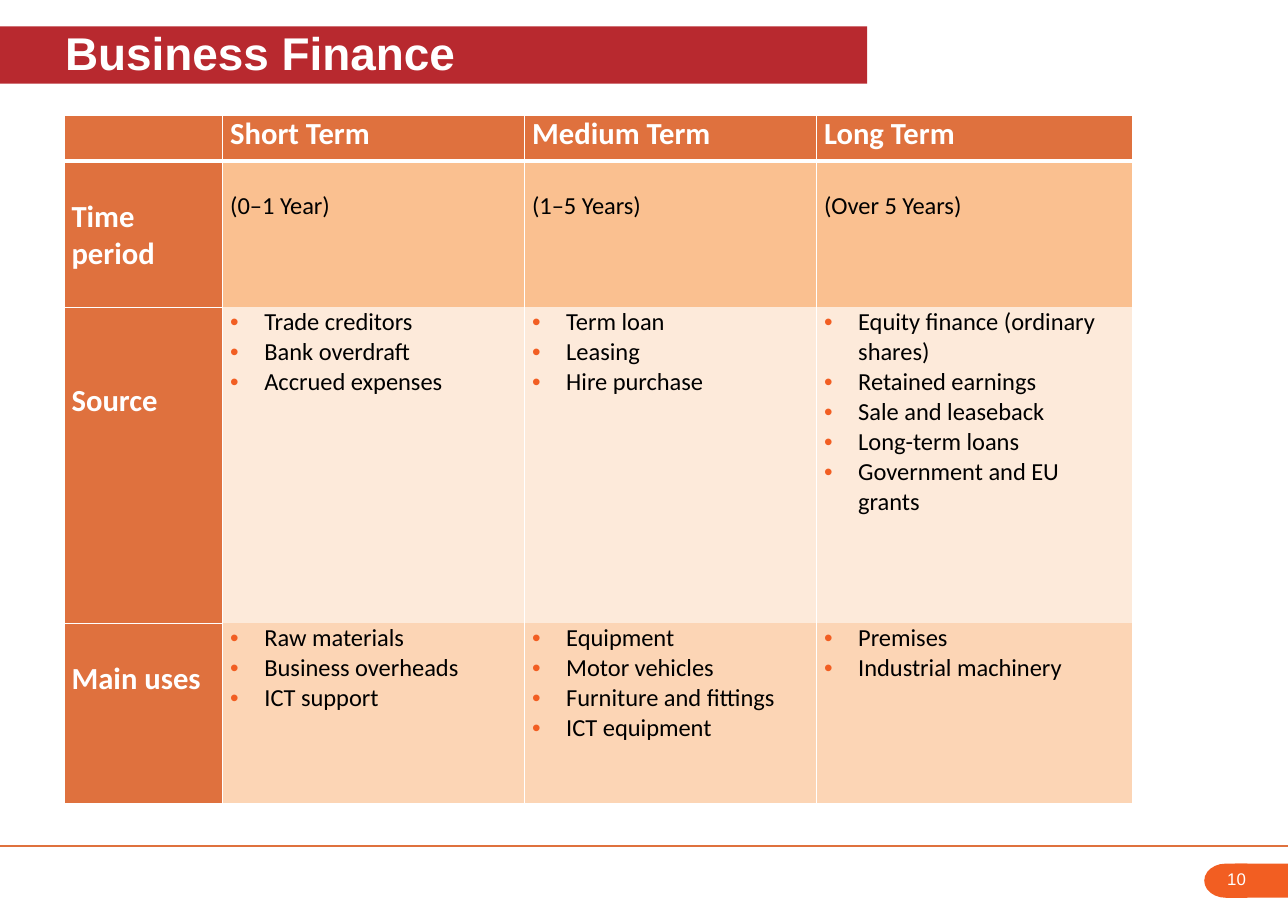
from lxml.etree import SubElement
from pptx import Presentation
from pptx.dml.color import RGBColor
from pptx.enum.shapes import MSO_CONNECTOR as Connector, MSO_SHAPE as Shape
from pptx.enum.text import MSO_ANCHOR as Anchor, PP_ALIGN as Align
from pptx.oxml.ns import qn
from pptx.util import Inches, Pt

COLORS = {
    "white": "FFFFFF", "black": "000000", "red": "B8292F", "orange": "F25E22",
    "rust": "DF713E", "peach": "FAC090", "cream": "FDEADA", "apricot": "FCD5B5",
}
WIDTH, HEIGHT = Inches(11.69), Inches(8.27)
COLUMNS = [12.32, 23.44, 22.67, 24.55]
ROWS = [4.96, 16.08, 34.7, 19.83]
ROW_FILLS = ["rust", "peach", "cream", "apricot"]
LABEL_LINES_ABOVE = [0, 1, 2, 1]
CONTENT = [
    [[], ["Short Term"], ["Medium Term"], ["Long Term"]],
    [["Time period"], ["(0–1 Year)"], ["(1–5 Years)"], ["(Over 5 Years)"]],
    [["Source"],
     ["Trade creditors", "Bank overdraft", "Accrued expenses"],
     ["Term loan", "Leasing", "Hire purchase"],
     ["Equity finance (ordinary shares)", "Retained earnings",
      "Sale and leaseback", "Long-term loans", "Government and EU grants"]],
    [["Main uses"],
     ["Raw materials", "Business overheads", "ICT support"],
     ["Equipment", "Motor vehicles", "Furniture and fittings", "ICT equipment"],
     ["Premises", "Industrial machinery"]],
]


def across(percent):
    return round(WIDTH * percent / 100)


def down(percent):
    return round(HEIGHT * percent / 100)


def place(left, top, width, height):
    return across(left), down(top), across(width), down(height)


def rgb(color):
    return RGBColor.from_string(COLORS[color])


def set_font(paragraph, name, size, color, bold=False):
    font = paragraph.font
    font.name, font.size, font.bold = name, Pt(size), bold
    font.color.rgb = rgb(color)


def add_block(slide, kind, box, color):
    shape = slide.shapes.add_shape(kind, *place(*box))
    shape.shadow.inherit = False
    shape.fill.solid()
    shape.fill.fore_color.rgb = rgb(color)
    shape.line.fill.background()
    return shape


def add_title(slide, text):
    shape = add_block(slide, Shape.RECTANGLE, (0, 2.9, 67.32, 6.29), "red")
    frame = shape.text_frame
    frame.word_wrap = True
    frame.vertical_anchor = Anchor.MIDDLE
    frame.margin_left, frame.margin_right = Inches(0.59), 0
    frame.margin_top, frame.margin_bottom = 0, Inches(0.05)
    paragraph = frame.paragraphs[0]
    paragraph.text = text
    paragraph.alignment = Align.LEFT
    set_font(paragraph, "Arial", 30, "white", True)


def add_footer(slide, number):
    line = slide.shapes.add_connector(
        Connector.STRAIGHT, 0, down(92.87), WIDTH, down(92.87))
    line.line.color.rgb = rgb("rust")
    line.line.width = Pt(0.75)
    SubElement(line._element.spPr, qn("a:effectLst"))
    cap = add_block(slide, Shape.FLOWCHART_DELAY, (93.5, 94.8, 3.34, 3.75), "orange")
    cap.rotation = 180
    add_block(slide, Shape.RECTANGLE, (95.89, 94.8, 4.11, 3.75), "orange")
    frame = slide.shapes.add_textbox(*place(94.44, 94.8, 4.79, 3.39)).text_frame
    frame.word_wrap = True
    frame.paragraphs[0].text = number
    set_font(frame.paragraphs[0], "Arial", 11, "white")


def set_borders(cell, widths):
    properties = cell._tc.get_or_add_tcPr()
    for side, width in zip("LRTB", widths):
        line = SubElement(properties, qn(f"a:ln{side}"), w=str(Pt(width)))
        if width:
            fill = SubElement(line, qn("a:solidFill"))
            SubElement(fill, qn("a:srgbClr"), val=COLORS["white"])
        else:
            SubElement(line, qn("a:noFill"))


def border_widths(row, column):
    if row == 0:
        return 1, 1, 1, 3
    top = 3 if row == 1 else int(column == 0)
    bottom = int(column == 0 or row == len(ROWS) - 1)
    return 1, 1, top, bottom


def add_bullet(paragraph):
    properties = paragraph._p.get_or_add_pPr()
    properties.set("marL", str(Inches(0.31)))
    properties.set("indent", str(-Inches(0.31)))
    color = SubElement(properties, qn("a:buClr"))
    SubElement(color, qn("a:srgbClr"), val=COLORS["orange"])
    SubElement(properties, qn("a:buFont"), typeface="Arial")
    SubElement(properties, qn("a:buChar"), char="•")


def fill_cell(cell, row, column, lines):
    heading = row == 0 or column == 0
    size = 20 if heading else 16
    lines_above = LABEL_LINES_ABOVE[row] if heading else int(row == 1)
    cell.margin_left = cell.margin_right = Inches(0.07)
    cell.margin_top = Pt(size * 1.22 * lines_above)
    cell.margin_bottom = 0
    set_borders(cell, border_widths(row, column))
    cell.fill.solid()
    cell.fill.fore_color.rgb = rgb("rust" if heading else ROW_FILLS[row])
    cell.text = "\n".join(lines)
    for paragraph in cell.text_frame.paragraphs:
        if row > 1 and not heading:
            add_bullet(paragraph)
        set_font(paragraph, "Calibri", size, "white" if heading else "black", heading)


def add_finance_table(slide):
    box = place(4.96, 12.7, sum(COLUMNS), sum(ROWS))
    table = slide.shapes.add_table(len(ROWS), len(COLUMNS), *box).table
    for column, width in zip(table.columns, COLUMNS):
        column.width = across(width)
    for row, height in zip(table.rows, ROWS):
        row.height = down(height)
    for row, cells in enumerate(CONTENT):
        for column, lines in enumerate(cells):
            fill_cell(table.cell(row, column), row, column, lines)


def main():
    presentation = Presentation()
    presentation.slide_width, presentation.slide_height = WIDTH, HEIGHT
    slide = presentation.slides.add_slide(presentation.slide_layouts[6])
    add_footer(slide, "10")
    add_title(slide, "Business Finance")
    add_finance_table(slide)
    presentation.save("out.pptx")


if __name__ == "__main__":
    main()
